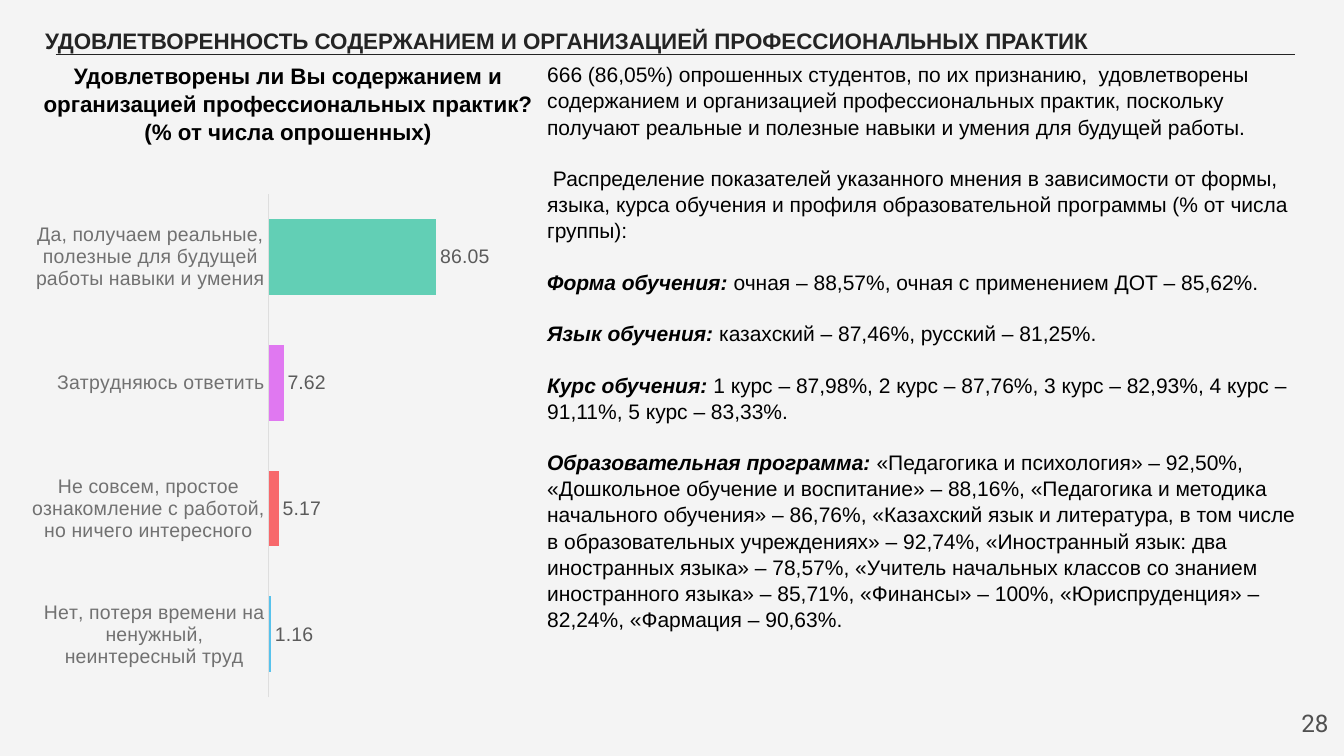
from lxml.etree import SubElement
from pptx import Presentation
from pptx.chart.data import CategoryChartData
from pptx.dml.color import RGBColor
from pptx.enum.chart import XL_CHART_TYPE as ChartType, XL_LABEL_POSITION as LabelPosition, XL_TICK_MARK as TickMark
from pptx.enum.shapes import MSO_CONNECTOR as Connector
from pptx.enum.text import PP_ALIGN as Align
from pptx.oxml import parse_xml
from pptx.oxml.ns import nsdecls, qn
from pptx.util import Cm, Pt

PAPER = RGBColor(0xF4, 0xF4, 0xF4)
INK = RGBColor(0x24, 0x24, 0x24)
BLACK = RGBColor(0, 0, 0)
NUMBER_GREY = RGBColor(0x50, 0x50, 0x50)
CATEGORY_GREY = RGBColor(0x71, 0x71, 0x71)
VALUE_GREY = RGBColor(0x5B, 0x5B, 0x5B)
AXIS_GREY = RGBColor(0xDE, 0xDE, 0xDE)
BLUE = RGBColor(0x57, 0xC2, 0xEC)
RED = RGBColor(0xF7, 0x68, 0x6B)
VIOLET = RGBColor(0xE0, 0x78, 0xF1)
GREEN = RGBColor(0x62, 0xCF, 0xB5)

ANSWERS = [
    ("Нет, потеря времени на ненужный, неинтересный труд", 1.16, BLUE),
    ("Не совсем, простое ознакомление с работой, но ничего интересного", 5.17, RED),
    ("Затрудняюсь ответить", 7.62, VIOLET),
    ("Да, получаем реальные, полезные для будущей работы навыки и умения", 86.05, GREEN),
]
FINDINGS = [
    ("", "666 (86,05%) опрошенных студентов, по их признанию,  удовлетворены содержанием "
     "и организацией профессиональных практик, поскольку получают реальные и полезные "
     "навыки и умения для будущей работы."),
    ("", " Распределение показателей указанного мнения в зависимости от формы, языка, курса "
     "обучения и профиля образовательной программы (% от числа группы):"),
    ("Форма обучения: ", "очная – 88,57%, очная с применением ДОТ – 85,62%."),
    ("Язык обучения: ", "казахский – 87,46%, русский – 81,25%."),
    ("Курс обучения: ", "1 курс – 87,98%, 2 курс – 87,76%, 3 курс – 82,93%, 4 курс – 91,11%, "
     "5 курс – 83,33%."),
    ("Образовательная программа: ", "«Педагогика и психология» – 92,50%, «Дошкольное обучение "
     "и воспитание» – 88,16%, «Педагогика и методика начального обучения» – 86,76%, «Казахский "
     "язык и литература, в том числе в образовательных учреждениях» – 92,74%, «Иностранный "
     "язык: два иностранных языка» – 78,57%, «Учитель начальных классов со знанием "
     "иностранного языка» – 85,71%, «Финансы» – 100%, «Юриспруденция» – 82,24%, "
     "«Фармация – 90,63%."),
]


def style_font(font, size, color, name="Arial", bold=False, italic=False):
    font.name, font.size, font.bold, font.italic = name, Pt(size), bold, italic
    font.color.rgb = color


def add_text(slide, box, paragraphs, size, color=BLACK, name="Arial", bold=False,
             align=Align.LEFT, inset=Cm(0.25), top_inset=Cm(0.13), gap=0, spacing=None):
    frame = slide.shapes.add_textbox(*map(Cm, box)).text_frame
    frame.word_wrap = True
    frame.margin_left, frame.margin_top = inset, top_inset
    for index, (lead, body) in enumerate(paragraphs):
        paragraph = frame.paragraphs[0] if index == 0 else frame.add_paragraph()
        paragraph.alignment = align
        paragraph.line_spacing = spacing
        paragraph.space_before = Pt(gap if index else 0)
        for part, is_lead in ((lead, True), (body, False)):
            if part:
                run = paragraph.add_run()
                run.text = part
                style_font(run.font, size, color, name, bold or is_lead, is_lead)


def add_rule(slide, left, right, y):
    rule = slide.shapes.add_connector(Connector.STRAIGHT, Cm(left), Cm(y), Cm(right), Cm(y))
    rule.line.color.rgb = INK
    rule.line.width = Pt(0.75)
    SubElement(rule._element.spPr, qn("a:effectLst"))


def set_plot_area(chart, x, y, width, height):
    plot_area = chart._chartSpace.chart.plotArea
    for layout in plot_area.findall(qn("c:layout")):
        plot_area.remove(layout)
    plot_area.insert(0, parse_xml(
        f'<c:layout {nsdecls("c")}><c:manualLayout><c:layoutTarget val="inner"/>'
        f'<c:xMode val="edge"/><c:yMode val="edge"/><c:x val="{x}"/><c:y val="{y}"/>'
        f'<c:w val="{width}"/><c:h val="{height}"/></c:manualLayout></c:layout>'))


def add_answer_chart(slide, box):
    data = CategoryChartData()
    data.categories = [answer for answer, _, _ in ANSWERS]
    data.add_series("Series 1", [share for _, share, _ in ANSWERS])
    chart = slide.shapes.add_chart(ChartType.BAR_CLUSTERED, *map(Cm, box), data).chart
    chart.has_legend = chart.has_title = False
    style_font(chart.font, 10, INK)
    set_plot_area(chart, 0.49, 0.03, 0.41, 0.97)

    answers_axis = chart.category_axis
    answers_axis.major_tick_mark = answers_axis.minor_tick_mark = TickMark.NONE
    answers_axis.format.line.color.rgb = AXIS_GREY
    answers_axis.format.line.width = Pt(0.75)
    style_font(answers_axis.tick_labels.font, 14, CATEGORY_GREY)
    shares_axis = chart.value_axis
    shares_axis.minimum_scale, shares_axis.maximum_scale = 0, 100
    shares_axis.has_major_gridlines = False
    shares_axis.visible = False

    bars = chart.plots[0]
    bars.gap_width = 66
    bars.vary_by_categories = False
    shares = bars.series[0]
    shares.format.fill.solid()
    shares.format.fill.fore_color.rgb = GREEN
    for index, (_, _, color) in enumerate(ANSWERS):
        fill = shares.points[index].format.fill
        fill.solid()
        fill.fore_color.rgb = color
    labels = shares.data_labels
    labels.show_value = True
    labels.position = LabelPosition.OUTSIDE_END
    style_font(labels.font, 14, VALUE_GREY)


def main():
    deck = Presentation()
    deck.slide_width, deck.slide_height = Cm(33.87), Cm(19.05)
    slide = deck.slides.add_slide(deck.slide_layouts[6])
    slide.background.fill.solid()
    slide.background.fill.fore_color.rgb = PAPER

    add_rule(slide, 1.4, 32.64, 1.37)
    add_text(slide, (0.53, 0.43, 31.17, 0.97),
             [("", "УДОВЛЕТВОРЕННОСТЬ СОДЕРЖАНИЕМ И ОРГАНИЗАЦИЕЙ ПРОФЕССИОНАЛЬНЫХ ПРАКТИК")],
             16, INK, bold=True, inset=Cm(0.61), top_inset=Cm(0.25))
    add_text(slide, (31.7, 17.6, 2.03, 1.45), [("", "28")], 17.3, NUMBER_GREY, "Roboto",
             align=Align.RIGHT, top_inset=Cm(0.25))
    add_text(slide, (0.53, 1.4, 13.46, 2.31),
             [("", "Удовлетворены ли Вы содержанием и организацией профессиональных практик?"),
              ("", "(% от числа опрошенных)")],
             16, bold=True, align=Align.CENTER, spacing=1.04)
    add_answer_chart(slide, (0.81, 4.5, 12.07, 13.08))
    add_text(slide, (13.54, 1.4, 19.51, 14.88), FINDINGS, 15, gap=18, spacing=1.04)
    deck.save("out.pptx")


if __name__ == "__main__":
    main()
